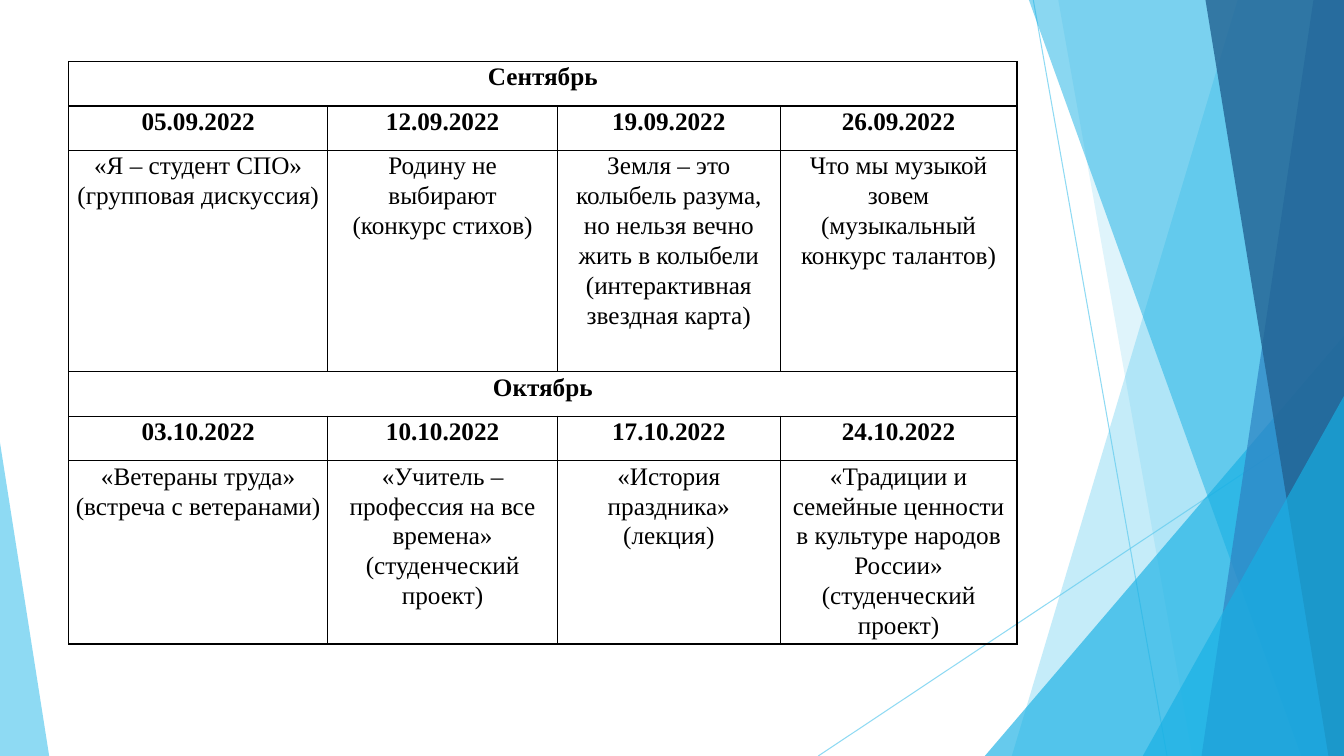
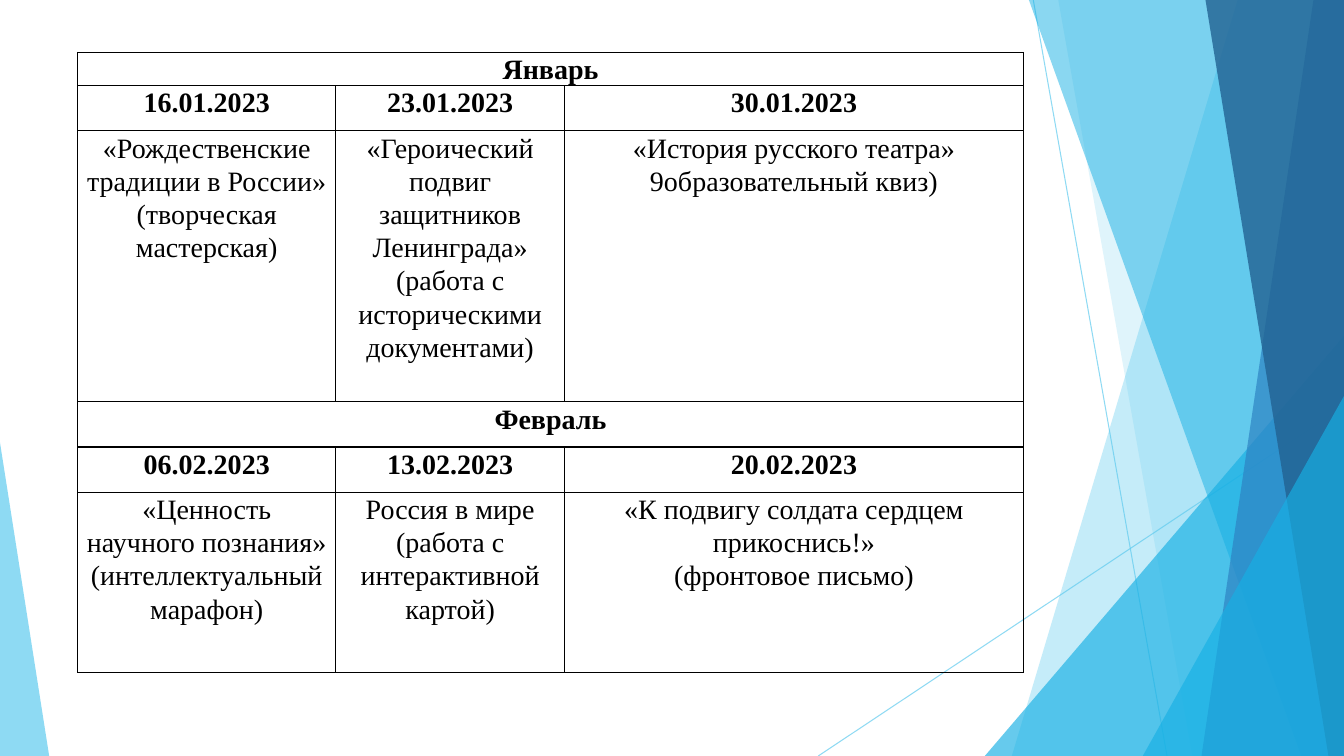
from lxml.etree import SubElement, fromstring
from pptx import Presentation
from pptx.dml.color import RGBColor
from pptx.enum.shapes import MSO_CONNECTOR as Connector, MSO_SHAPE as Preset
from pptx.enum.text import MSO_ANCHOR as Anchor, PP_ALIGN as Align
from pptx.oxml.ns import nsdecls, qn
from pptx.util import Cm, Pt

WIDTH, HEIGHT = 33.87, 19.05
COLORS = {"sky": "5FCBEF", "cyan": "17B0E4", "blue": "2E83C3", "navy": "226292", "text": "000000"}

SCHEDULES = [
    {
        "left": 1.73, "top": 1.55, "size": 18,
        "columns": [6.53, 5.79, 5.61, 5.97],
        "rows": [1.12, 1.12, 5.58, 1.12, 1.12, 4.62],
        "months": [
            ("Сентябрь", [
                ("05.09.2022", "«Я – студент СПО»\n(групповая дискуссия)"),
                ("12.09.2022", "Родину не выбирают\n(конкурс стихов)"),
                ("19.09.2022", "Земля – это колыбель разума, но нельзя вечно жить в колыбели\n"
                               "(интерактивная звездная карта)"),
                ("26.09.2022", "Что мы музыкой зовем\n(музыкальный конкурс талантов)"),
            ]),
            ("Октябрь", [
                ("03.10.2022", "«Ветераны труда» (встреча с ветеранами)"),
                ("10.10.2022", "«Учитель – профессия на все времена»\n(студенческий проект)"),
                ("17.10.2022", "«История праздника»\n(лекция)"),
                ("24.10.2022", "«Традиции и семейные ценности в культуре народов России»\n"
                               "(студенческий проект)"),
            ]),
        ],
    },
    {
        "left": 1.96, "top": 1.32, "size": 20,
        "columns": [6.5, 5.77, 11.56],
        "rows": [0.82, 1.14, 6.83, 1.14, 1.14, 4.55],
        "months": [
            ("Январь", [
                ("16.01.2023", "«Рождественские традиции в России»\n(творческая мастерская)"),
                ("23.01.2023", "«Героический подвиг защитников Ленинграда»\n"
                               "(работа с историческими документами)"),
                ("30.01.2023", "«История русского театра»\n9образовательный квиз)"),
            ]),
            ("Февраль", [
                ("06.02.2023", "«Ценность научного познания»\n(интеллектуальный марафон)"),
                ("13.02.2023", "Россия в мире\n(работа с интерактивной картой)"),
                ("20.02.2023", "«К подвигу солдата сердцем прикоснись!»\n(фронтовое письмо)"),
            ]),
        ],
    },
]

# kind, geometry, colour, opacity
DECORATION = [
    ("line", (26.04, 0, 29.41, HEIGHT), "sky", 70),
    ("line", (WIDTH, 10.24, 20.62, HEIGHT), "sky", 70),
    ("band", (31.19, 25.5), "sky", 36),
    ("band", (26.67, 30.05), "sky", 20),
    ("triangle", (24.82, 8.46, 9.05, 1), "cyan", 66),
    ("band", (25.93, 32.79), "cyan", 50),
    ("band", (33.1, 30.28), "blue", 70),
    ("band", (30.38, 33.48), "navy", 80),
    ("triangle", (28.8, 9.98, 5.07, 1), "cyan", 66),
    ("triangle", (0, 11.15, 1.24, 0), "sky", 70),
]


def color(name):
    """Return the named colour."""
    return RGBColor.from_string(COLORS[name])


def add_line(shapes, start_x, start_y, end_x, end_y):
    """Add a thin line without a shadow."""
    ends = [Cm(value) for value in (start_x, start_y, end_x, end_y)]
    connector = shapes.add_connector(Connector.STRAIGHT, *ends)
    connector.line.width = Pt(0.75)
    SubElement(connector.element.spPr, qn("a:effectLst"))
    return connector


def add_band(shapes, top_x, bottom_x):
    """Add a full-height band from a slanted edge to the right side."""
    corners = [(WIDTH, 0), (WIDTH, HEIGHT), (bottom_x, HEIGHT)]
    builder = shapes.build_freeform(Cm(top_x), 0)
    builder.add_line_segments([(Cm(x), Cm(y)) for x, y in corners])
    return builder.convert_to_shape()


def add_triangle(shapes, left, top, width, apex):
    """Add a triangle that stands on the bottom edge."""
    box = [Cm(value) for value in (left, top, width, HEIGHT - top)]
    triangle = shapes.add_shape(Preset.ISOSCELES_TRIANGLE, *box)
    triangle.adjustments[0] = apex
    return triangle


def decorate_master(master, slide):
    """Draw the shared decoration and move it to the slide master."""
    makers = {"line": add_line, "band": add_band, "triangle": add_triangle}
    for number, (kind, geometry, name, opacity) in enumerate(DECORATION, 100):
        shape = makers[kind](slide.shapes, *geometry)
        if kind == "line":
            shape.line.color.rgb = color(name)
        else:
            shape.shadow.inherit = False
            shape.fill.solid()
            shape.fill.fore_color.rgb = color(name)
            shape.line.fill.background()
        for paint in shape.element.xpath(".//a:srgbClr"):
            SubElement(paint, qn("a:alpha"), val=str(opacity * 1000))
        shape.element.xpath(".//p:cNvPr")[0].set("id", str(number))
        master.shapes.element.append(shape.element)


def fill_cell(cell, text, size, bold):
    """Write and format one cell with thin borders."""
    cell.text = text
    layout = {"margin_left": Cm(0.18), "margin_right": Cm(0.18), "margin_top": 0,
              "margin_bottom": 0, "vertical_anchor": Anchor.TOP}
    for attribute, value in layout.items():
        setattr(cell, attribute, value)
    cell.fill.background()
    for paragraph in cell.text_frame.paragraphs:
        paragraph.alignment = Align.CENTER
        paragraph.line_spacing = 1.07
        font = paragraph.font
        for run in paragraph.runs:
            font = run.font
            for attribute, value in {"name": "Times New Roman", "size": Pt(size), "bold": bold}.items():
                setattr(font, attribute, value)
            font.color.rgb = color("text")
    properties = cell._tc.get_or_add_tcPr()
    for index, side in enumerate("LRTB"):
        properties.insert(index, fromstring(
            f'<a:ln{side} {nsdecls("a")} w="12700"><a:solidFill>'
            f'<a:srgbClr val="{COLORS["text"]}"/></a:solidFill></a:ln{side}>'))


def add_schedule(slide, schedule):
    """Add a table with a heading, dates and topics for each month."""
    columns, rows = schedule["columns"], schedule["rows"]
    box = [Cm(value) for value in (schedule["left"], schedule["top"], sum(columns), sum(rows))]
    table = slide.shapes.add_table(len(rows), len(columns), *box).table
    table.first_row = table.horz_banding = False
    for column, width in zip(table.columns, columns):
        column.width = Cm(width)
    for row, height in zip(table.rows, rows):
        row.height = Cm(height)
    lines = []
    for month, events in schedule["months"]:
        dates, topics = zip(*events)
        heading = [month] + [""] * (len(columns) - 1)
        lines += [(heading, True), (dates, True), (topics, False)]
    for row, (texts, bold) in enumerate(lines):
        for column, text in enumerate(texts):
            fill_cell(table.cell(row, column), text, schedule["size"], bold)
        if row % 3 == 0:
            table.cell(row, 0).merge(table.cell(row, len(columns) - 1))


def main():
    """Build and save the presentation."""
    presentation = Presentation()
    presentation.slide_width, presentation.slide_height = Cm(WIDTH), Cm(HEIGHT)
    blank = presentation.slide_layouts[6]
    slides = [presentation.slides.add_slide(blank) for _ in SCHEDULES]
    decorate_master(presentation.slide_master, slides[0])
    for slide, schedule in zip(slides, SCHEDULES):
        add_schedule(slide, schedule)
    presentation.save("out.pptx")


if __name__ == "__main__":
    main()
